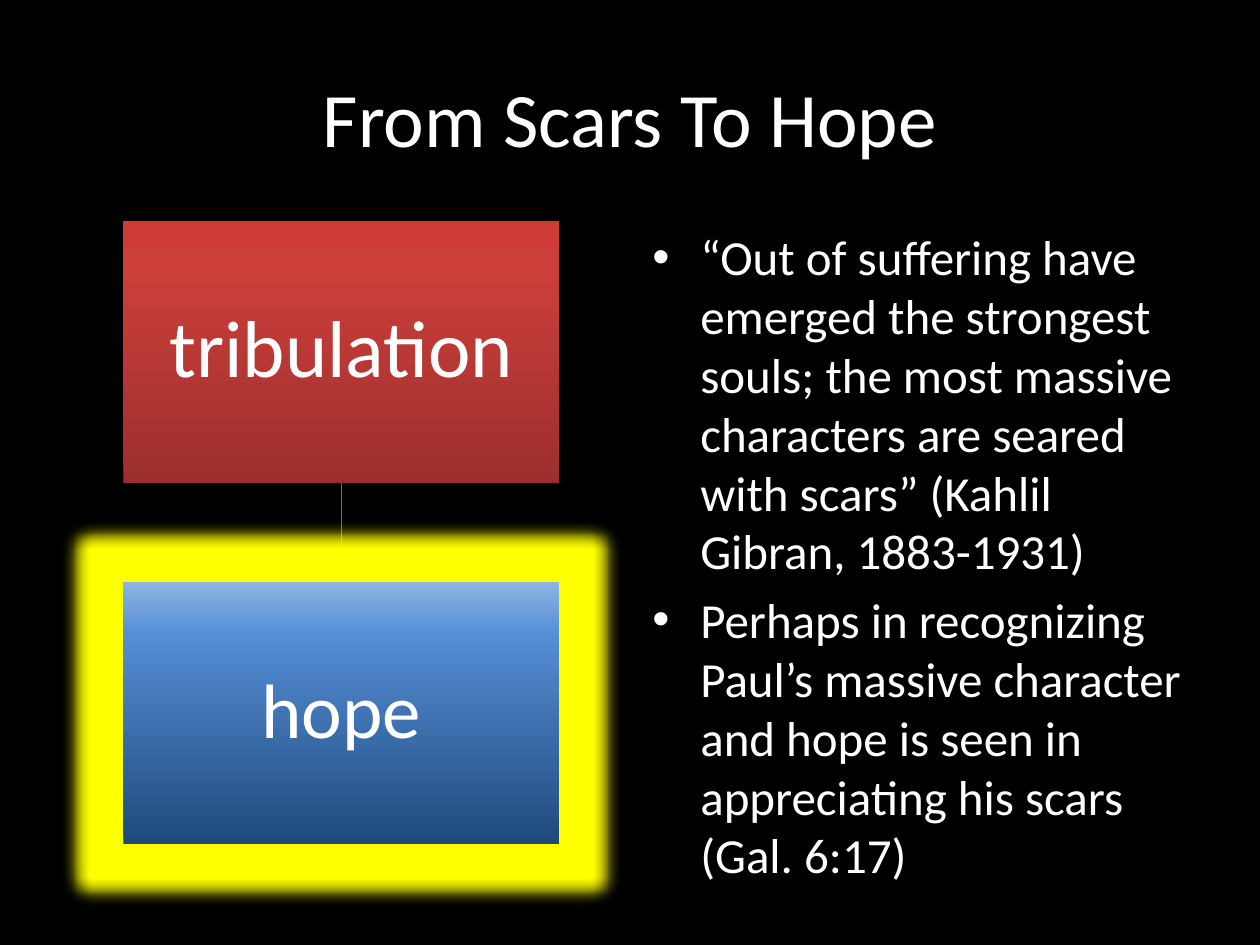
from dataclasses import dataclass

from lxml import etree
from pptx import Presentation
from pptx.dml.color import RGBColor
from pptx.enum.shapes import MSO_CONNECTOR, MSO_SHAPE
from pptx.enum.text import MSO_ANCHOR, PP_ALIGN
from pptx.oxml.ns import qn
from pptx.util import Inches, Pt

RECT = MSO_SHAPE.RECTANGLE
LINE = MSO_CONNECTOR.STRAIGHT
MIDDLE = MSO_ANCHOR.MIDDLE
CENTER = PP_ALIGN.CENTER


@dataclass(frozen=True)
class Theme:
    font: str = "Calibri"
    back: str = "000000"
    text: str = "FFFFFF"
    link: str = "C0504D"
    glow: str = "FFFF00"
    red: tuple = ("9C2F2D", "CB3E3A", "CE3B37")
    blue: tuple = ("1F497D", "558ED5", "8EB4E3")
    title: int = 44
    large: int = 46
    body: int = 28


def add(parent, tag, **attrs):
    node = etree.SubElement(parent, qn(tag))
    for key, value in attrs.items():
        node.set(key, str(value))
    return node


class Deck:
    def __init__(self, theme):
        self.theme = theme
        self.prs = Presentation()
        self.prs.slide_width, self.prs.slide_height = Inches(10), Inches(7.5)
        self.slide = self.prs.slides.add_slide(self.prs.slide_layouts[5])
        fill = self.slide.background.fill
        fill.solid()
        fill.fore_color.rgb = RGBColor.from_string(theme.back)

    def style(self, para, size):
        para.font.name = self.theme.font
        para.font.size = Pt(size)
        para.font.color.rgb = RGBColor.from_string(self.theme.text)

    def title(self, text, left, top, width, height):
        shape = self.slide.shapes.title
        shape.left, shape.top = Inches(left), Inches(top)
        shape.width, shape.height = Inches(width), Inches(height)
        frame = shape.text_frame
        frame.text = text
        frame.vertical_anchor = MIDDLE
        para = frame.paragraphs[0]
        para.alignment = CENTER
        self.style(para, self.theme.title)

    def fade(self, shape, colors):
        """Fill from bottom to top with three colours."""
        shape.fill.gradient()
        shape.fill.gradient_angle = 90
        stops = shape.element.spPr.find(qn("a:gradFill")).find(qn("a:gsLst"))
        for stop in list(stops):
            stops.remove(stop)
        for place, color in zip((0, 80, 100), colors):
            stop = add(stops, "a:gs", pos=place * 1000)
            add(stop, "a:srgbClr", val=color)

    def box(self, text, left, top, width, height, colors, size, pad, glow=None):
        shape = self.slide.shapes.add_shape(
            RECT, Inches(left), Inches(top), Inches(width), Inches(height))
        shape.shadow.inherit = False
        self.fade(shape, colors)
        shape.line.fill.background()
        if glow:
            effects = shape.element.spPr.find(qn("a:effectLst"))
            halo = add(effects, "a:glow", rad=Inches(0.25))
            add(halo, "a:srgbClr", val=glow)
        frame = shape.text_frame
        frame.word_wrap = True
        frame.vertical_anchor = MIDDLE
        frame.margin_left = frame.margin_right = Inches(pad)
        frame.margin_top = frame.margin_bottom = Inches(pad)
        frame.text = text
        para = frame.paragraphs[0]
        para.alignment = CENTER
        para.line_spacing = 0.9
        self.style(para, size)

    def arrow(self, x, start, end):
        line = self.slide.shapes.add_connector(
            LINE, Inches(x), Inches(start), Inches(x), Inches(end))
        line.line.color.rgb = RGBColor.from_string(self.theme.link)
        line.line.width = Pt(0.75)
        add(line.line._get_or_add_ln(), "a:tailEnd", type="arrow")
        add(line.element.spPr, "a:effectLst")

    def bullets(self, items, left, top, width, height):
        frame = self.slide.shapes.add_textbox(
            Inches(left), Inches(top), Inches(width), Inches(height)).text_frame
        frame.word_wrap = True
        frame.text = "\n".join(items)
        indent = Inches(0.38)
        for para in frame.paragraphs:
            para.space_before = Pt(0.2 * self.theme.body)
            self.style(para, self.theme.body)
            props = para._p.get_or_add_pPr()
            props.set("marL", str(indent))
            props.set("indent", str(-indent))
            mark = etree.Element(qn("a:buFont"), typeface="Arial")
            props.find(qn("a:defRPr")).addprevious(mark)
            dot = etree.Element(qn("a:buChar"), char="•")
            mark.addnext(dot)


def main():
    theme = Theme()
    deck = Deck(theme)
    deck.title("From Scars To Hope", 0.5, 0.3, 9, 1.25)

    left, top, width, height = 0.98, 1.75, 3.46, 2.08
    low = top + height + 0.79
    deck.arrow(left + width / 2, top + height, low - 0.03)
    deck.box("tribulation", left, top, width, height,
             theme.red, theme.large, 0.36)
    deck.box("hope", left, low, width, height,
             theme.blue, theme.title, 0.34, theme.glow)

    deck.bullets([
        "“Out of suffering have emerged the strongest souls; the most massive "
        "characters are seared with scars” (Kahlil Gibran, 1883-1931)",
        "Perhaps in recognizing Paul’s massive character and hope is seen in "
        "appreciating his scars (Gal. 6:17)",
    ], 5.08, top, 4.42, 4.95)
    deck.prs.save("out.pptx")


if __name__ == "__main__":
    main()
